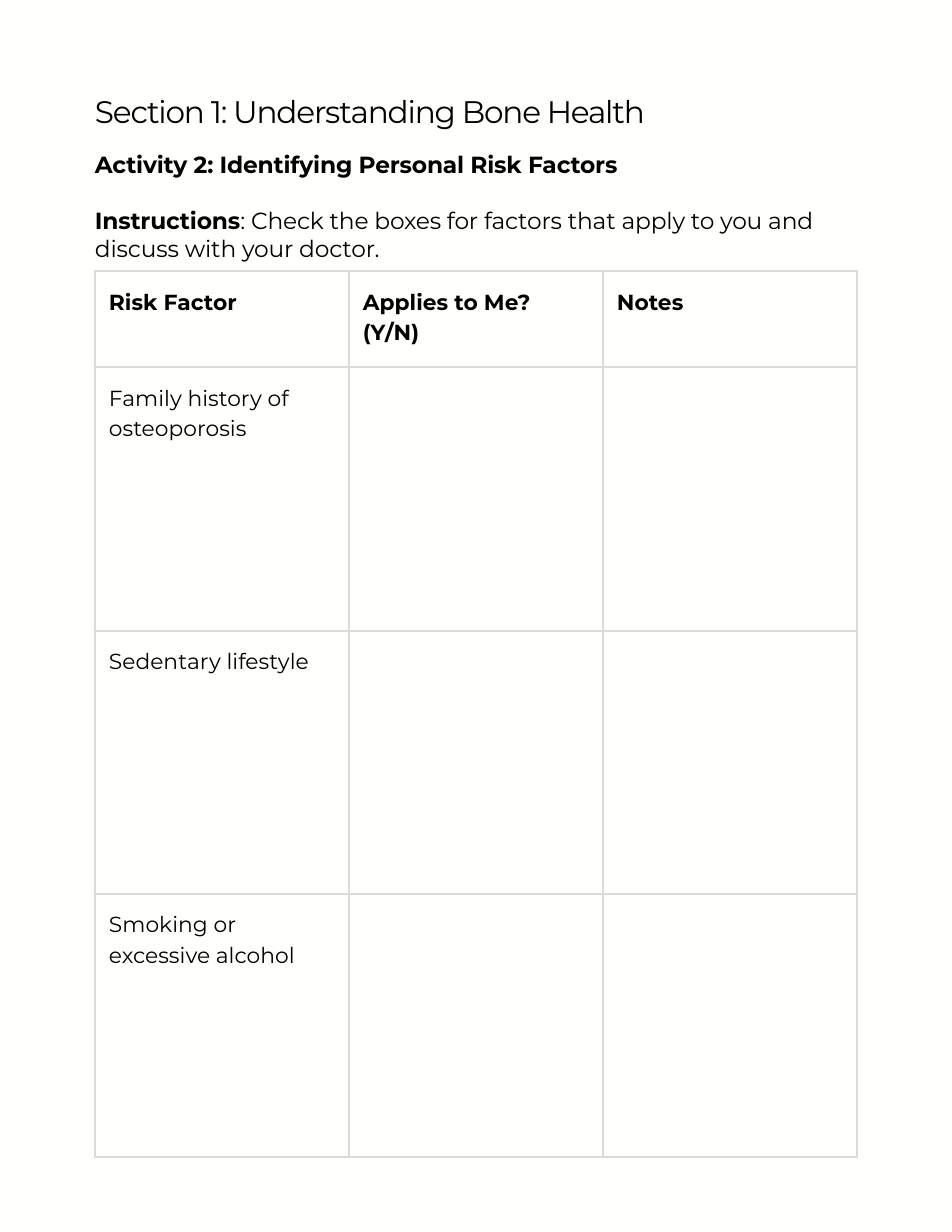
import pptx
import pptx.util
import pptx.dml.color
import pptx.enum.text
import pptx.oxml.ns
import lxml.etree

PX = 914400 // 112  # one px in EMU
THEME = {
    "font": "Montserrat",
    "page": "FFFFFC", "ink": "000000", "rule": "DBDBDB",
    "title": 20, "body": 15, "cell": 14,
    "lead": 18, "row": 19.6, "line": 1.5,
}


def style(par, size, lead, bold=False, track=0):
    par.alignment = pptx.enum.text.PP_ALIGN.LEFT
    par.line_spacing = pptx.util.Pt(lead)
    for run in par.runs:
        font = run.font
        font.name = THEME["font"]
        font.size = pptx.util.Pt(size)
        font.bold = bold
        font.color.rgb = pptx.dml.color.RGBColor.from_string(THEME["ink"])
        if track:
            run._r.get_or_add_rPr().set("spc", str(track))


def place(shape, left, top, width, height):
    shape.left, shape.top = left * PX, top * PX
    shape.width, shape.height = width * PX, height * PX
    frame = shape.text_frame
    frame.word_wrap = True
    frame.vertical_anchor = pptx.enum.text.MSO_ANCHOR.TOP
    frame.auto_size = pptx.enum.text.MSO_AUTO_SIZE.NONE
    frame.margin_left = frame.margin_right = 0
    frame.margin_top = frame.margin_bottom = 0
    return frame


deck = pptx.Presentation()
deck.slide_width, deck.slide_height = 952 * PX, 1232 * PX
slide = deck.slides.add_slide(deck.slide_layouts[5])
page = slide.background.fill
page.solid()
page.fore_color.rgb = pptx.dml.color.RGBColor.from_string(THEME["page"])

# Title
frame = place(slide.shapes.title, 95, 102, 762, 30)
frame.text = "Section 1: Understanding Bone Health"
style(frame.paragraphs[0], THEME["title"], THEME["lead"], track=-80)

# Activity and instructions
frame = place(slide.shapes.add_textbox(0, 0, PX, PX), 95, 150, 762, 104)
head = frame.paragraphs[0]
head.text = "Activity 2: Identifying Personal Risk Factors"
style(head, THEME["body"], THEME["lead"], bold=True, track=-10)
guide = frame.add_paragraph()
guide.space_before = pptx.util.Pt(THEME["lead"])
guide.text = "Instructions"
guide.add_run().text = ": Check the boxes for factors that apply to you and discuss with your doctor."
style(guide, THEME["body"], THEME["lead"], track=-10)
guide.runs[0].font.bold = True

# Risk table
rows = [
    ("Risk Factor", "Applies to Me? (Y/N)", "Notes"),
    ("Family history of osteoporosis", "", ""),
    ("Sedentary lifestyle", "", ""),
    ("Smoking or excessive alcohol", "", ""),
]
heights = [96, 264, 263, 263]
grid = slide.shapes.add_table(4, 3, 95 * PX, 271 * PX, 762 * PX, sum(heights) * PX).table
grid.first_row = grid.horz_banding = False
for col in grid.columns:
    col.width = 254 * PX
for r, (texts, height) in enumerate(zip(rows, heights)):
    grid.rows[r].height = height * PX
    for c, text in enumerate(texts):
        cell = grid.cell(r, c)
        cell.margin_left = cell.margin_right = 14 * PX
        cell.margin_top = cell.margin_bottom = 14 * PX
        cell.text_frame.text = text
        style(cell.text_frame.paragraphs[0], THEME["cell"], THEME["row"], bold=r == 0)

        # Cell borders come before the fill
        props = cell._tc.get_or_add_tcPr()
        for side in ("lnL", "lnR", "lnT", "lnB"):
            line = lxml.etree.SubElement(props, pptx.oxml.ns.qn("a:" + side))
            line.set("w", str(pptx.util.Pt(THEME["line"])))
            fill = lxml.etree.SubElement(line, pptx.oxml.ns.qn("a:solidFill"))
            tint = lxml.etree.SubElement(fill, pptx.oxml.ns.qn("a:srgbClr"))
            tint.set("val", THEME["rule"])
        cell.fill.background()

deck.save("out.pptx")
